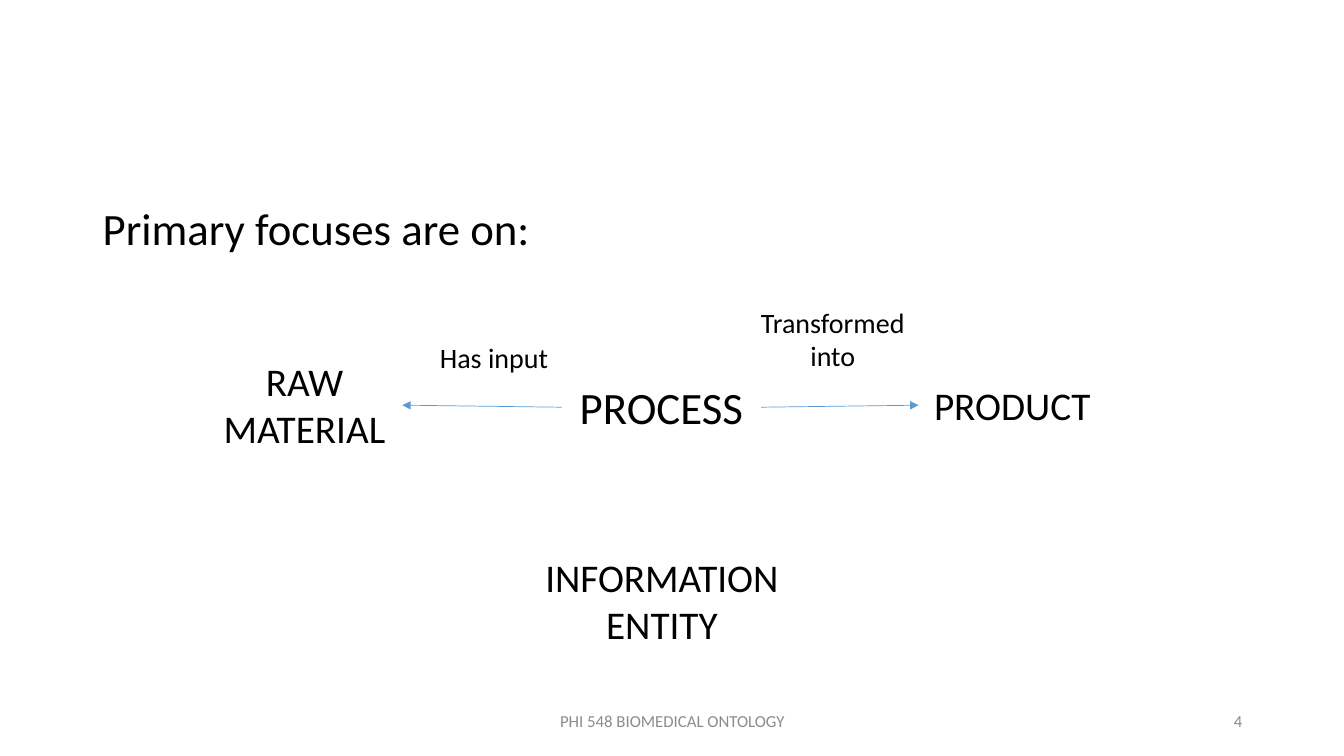
from dataclasses import dataclass

from lxml.etree import SubElement
from pptx import Presentation
from pptx.dml.color import RGBColor
from pptx.enum.shapes import MSO_CONNECTOR
from pptx.enum.text import MSO_ANCHOR, PP_ALIGN
from pptx.oxml.ns import qn
from pptx.util import Pt

PX = 9144  # EMU per px, 100 px to the inch


@dataclass(frozen=True)
class Theme:
    font: str = "Calibri"
    ink: RGBColor = RGBColor(0x00, 0x00, 0x00)
    muted: RGBColor = RGBColor(0x8C, 0x8C, 0x8C)
    arrow: RGBColor = RGBColor(0x5B, 0x9B, 0xD5)
    arrow_width: float = 0.5
    heading: int = 32
    entity: int = 28
    relation: int = 20
    footer: int = 12


class DiagramSlide:
    def __init__(self, slide, theme):
        self.slide = slide
        self.theme = theme

    def text(self, words, box, size, color=None, align=PP_ALIGN.CENTER,
             anchor=MSO_ANCHOR.TOP):
        """Add wrapped text in box (left, top, width, height); return its paragraph."""
        frame = self.slide.shapes.add_textbox(*(n * PX for n in box)).text_frame
        frame.word_wrap = True
        frame.vertical_anchor = anchor
        paragraph = frame.paragraphs[0]
        paragraph.alignment = align
        run = paragraph.add_run()
        run.text = words
        run.font.name = self.theme.font
        run.font.size = Pt(size)
        run.font.color.rgb = color or self.theme.ink
        return paragraph

    def heading(self, words, box):
        paragraph = self.text(words, box, self.theme.heading, align=PP_ALIGN.LEFT)
        paragraph.line_spacing = 0.9
        paragraph.space_before = Pt(10)

    def footer(self, words, left, width, align):
        self.text(words, (left, 695, width, 40), self.theme.footer,
                  self.theme.muted, align, MSO_ANCHOR.MIDDLE)

    def arrow(self, start, end):
        ends = (n * PX for n in (*start, *end))
        connector = self.slide.shapes.add_connector(MSO_CONNECTOR.STRAIGHT, *ends)
        connector.line.color.rgb = self.theme.arrow
        connector.line.width = Pt(self.theme.arrow_width)
        SubElement(connector.line._get_or_add_ln(), qn("a:tailEnd"), type="triangle")
        SubElement(connector._element.spPr, qn("a:effectLst"))


def main():
    presentation = Presentation()
    presentation.slide_width = 1333 * PX
    presentation.slide_height = 750 * PX
    theme = Theme()
    page = DiagramSlide(
        presentation.slides.add_slide(presentation.slide_layouts[6]), theme)

    page.heading("Primary focuses are on:", (92, 200, 1150, 476))

    labels = [
        ("RAW MATERIAL", (205, 350, 194, 104), theme.entity),
        ("PROCESS", (557, 372, 198, 64), theme.heading),
        ("PRODUCT", (911, 373, 186, 57), theme.entity),
        ("INFORMATION ENTITY", (528, 544, 257, 104), theme.entity),
        ("Has input", (417, 333, 146, 44), theme.relation),
        ("Transformed into", (741, 298, 170, 77), theme.relation),
    ]
    for words, box, size in labels:
        page.text(words, box, size)

    page.arrow((755, 404), (911, 402))
    page.arrow((557, 404), (399, 402))

    page.footer("PHI 548 BIOMEDICAL ONTOLOGY", 442, 450, PP_ALIGN.CENTER)
    page.footer("4", 942, 300, PP_ALIGN.RIGHT)

    presentation.save("out.pptx")


if __name__ == "__main__":
    main()
